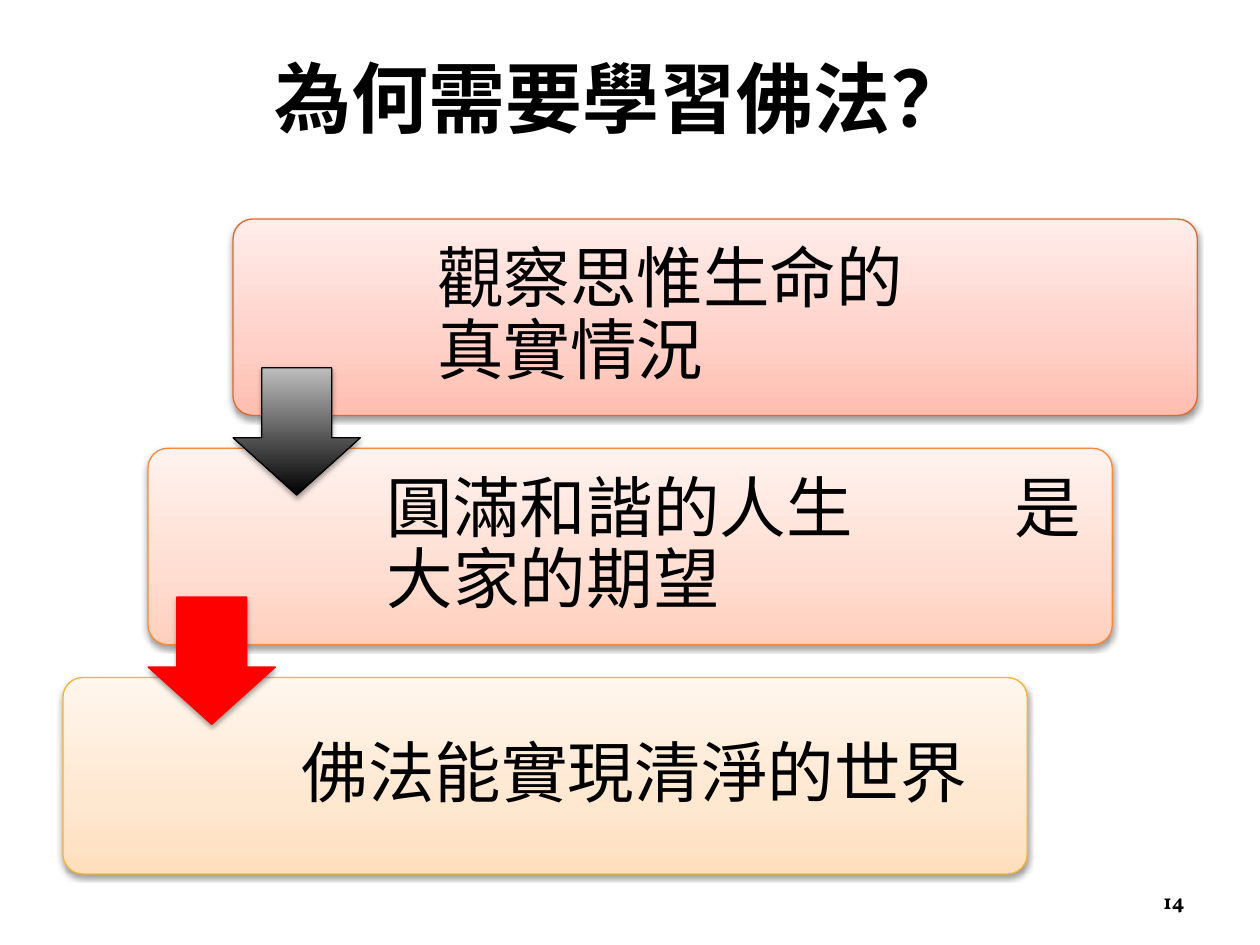
"""Build a slide of three stepped cards linked by down arrows."""
from copy import deepcopy

from lxml import etree
from pptx import Presentation
from pptx import util as u
from pptx.dml.color import RGBColor
from pptx.enum import shapes, text
from pptx.oxml import ns

CJK = "Noto Sans CJK SC"
CARD_LEFT, CARD_TOP, CARD_WIDTH, CARD_HEIGHT = 133.2, 125.2, 551, 112.2
STEP_LEFT, STEP_DOWN = 48.6, 131
ARROW_SIZE, ARROW_DROP = 72.7, 85
MARGIN = 3.2


def color(value):
    return RGBColor.from_string(value)


def add_element(parent, tag, **values):
    element = etree.SubElement(parent, ns.qn(tag))
    for name, value in values.items():
        element.set(name, str(value))
    return element


class SlideBuilder:
    def __init__(self, page, ink="000000"):
        self.page = page
        self.ink = ink

    def shape(self, kind, frame, adjustments, stops, line, shadow):
        item = self.page.shapes.add_shape(kind, *map(u.Pt, frame))
        for index, value in enumerate(adjustments):
            item.adjustments[index] = value
        self.fill(item, stops)
        item.line.color.rgb = color(line)
        item.line.width = u.Pt(0.75)
        self.shadow(item, *shadow)

    def fill(self, item, stops):
        if len(stops) == 1:
            item.fill.solid()
            item.fill.fore_color.rgb = color(stops[0][1])
            return
        item.fill.gradient()
        item.fill.gradient_angle = 90
        stop_list = item.element.spPr.find(".//" + ns.qn("a:gsLst"))
        while len(stop_list) < len(stops):
            stop_list.append(deepcopy(stop_list[0]))
        for stop, (position, value) in zip(item.fill.gradient_stops, stops):
            stop.position = position
            stop.color.rgb = color(value)

    def shadow(self, item, opacity, distance):
        item.shadow.inherit = False
        effects = item.element.spPr.find(ns.qn("a:effectLst"))
        outer = add_element(effects, "a:outerShdw", blurRad=u.Pt(3.1), dist=u.Pt(distance),
                            dir=5400000, rotWithShape=0)
        tint = add_element(outer, "a:srgbClr", val=self.ink)
        add_element(tint, "a:alpha", val=opacity * 1000)

    def text(self, frame, spans, size, insets=(7.2, 3.6), bold=False, tab=None, **layout):
        box = self.page.shapes.add_textbox(*map(u.Pt, frame)).text_frame
        side, edge = map(u.Pt, insets)
        settings = {"word_wrap": True, "vertical_anchor": text.MSO_ANCHOR.MIDDLE,
                    "margin_left": side, "margin_right": side,
                    "margin_top": edge, "margin_bottom": edge}
        for name, value in settings.items():
            setattr(box, name, value)
        para = box.paragraphs[0]
        if tab:
            tabs = add_element(para._p.get_or_add_pPr(), "a:tabLst")
            add_element(tabs, "a:tab", pos=u.Pt(tab), algn="l")
        for name, value in layout.items():
            setattr(para, name, value)
        for words, face in spans:
            if words == "\n":
                para.add_line_break()
                continue
            span = para.add_run()
            span.text = words
            span.font.color.rgb = color(self.ink)
            for name, value in {"name": face, "size": u.Pt(size), "bold": bold}.items():
                setattr(span.font, name, value)
            add_element(span.font._element, "a:ea", typeface=face)


def main():
    deck = Presentation()
    deck.slide_width, deck.slide_height = u.Pt(720), u.Pt(540)
    builder = SlideBuilder(deck.slides.add_slide(deck.slide_layouts[6]))
    cards = [
        (["觀察思惟生命的", "真實情況"], 116.6, 0, ("FFBDAF", "FFD0C7", "FFEDEA"), "DD6831"),
        (["圓滿和諧的人生\t是", "大家的期望"], 125, 11.5, ("FFCFBD", "FFDDD1", "FFF2EE"), "F98937"),
        (["佛法能實現清淨的世界"], 125, 11.5, ("FFDEBC", "FFE7D0", "FFF6ED"), "F8B333"),
    ]
    for index, (lines, indent, side, tones, line) in enumerate(cards):
        left = CARD_LEFT - index * STEP_LEFT
        top = CARD_TOP + index * STEP_DOWN
        builder.shape(shapes.MSO_SHAPE.ROUNDED_RECTANGLE, (left, top, CARD_WIDTH, CARD_HEIGHT),
                      [0.1], list(zip((0, 0.35, 1), tones)), line, (38, 1.6))
        spans = [(lines[0], CJK)]
        for words in lines[1:]:
            spans += [("\n", CJK), (words, CJK)]
        frame = (left + indent, top + MARGIN, CARD_WIDTH - indent - MARGIN,
                 CARD_HEIGHT - 2 * MARGIN)
        builder.text(frame, spans, 38, (side, 11.5), tab=358.5, line_spacing=0.9)

    arrows = [([(0, "000000"), (1, "BDBDBD")], "000000"), ([(0, "FF0000")], "FF0000")]
    for index, (stops, line) in enumerate(arrows):
        frame = (CARD_LEFT - index * STEP_LEFT, CARD_TOP + ARROW_DROP + index * STEP_DOWN,
                 ARROW_SIZE, ARROW_SIZE)
        builder.shape(shapes.MSO_SHAPE.DOWN_ARROW, frame, [0.55, 0.45], stops, line, (35, 1.8))

    builder.text((516, 500.4, 168, 28.8), [("14", "Vollkorn")], 12, bold=True,
                 alignment=text.PP_ALIGN.RIGHT)
    builder.text((115.2, 10, 480, 90), [("為何需要學習佛法", CJK), ("？", "Arial")], 44, bold=True,
                 alignment=text.PP_ALIGN.CENTER)
    deck.save("out.pptx")


if __name__ == "__main__":
    main()
